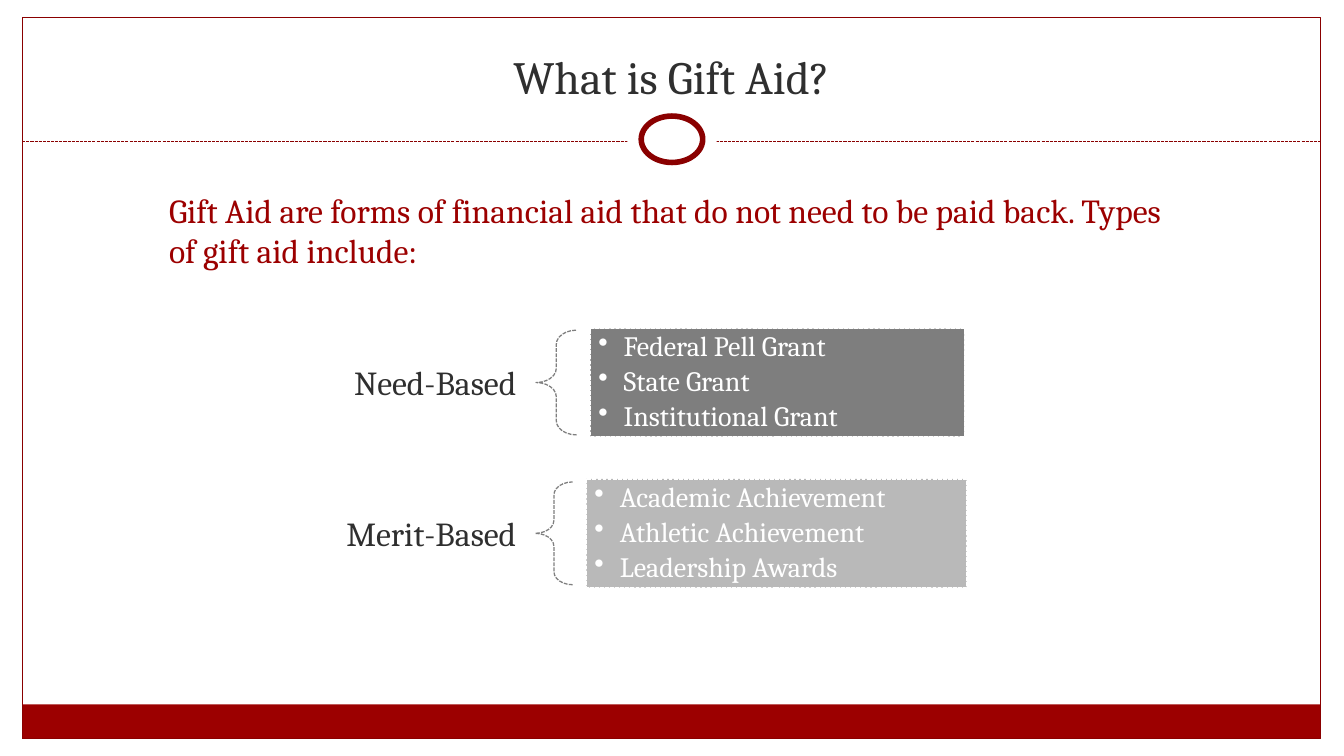
from lxml import etree
from pptx import Presentation
from pptx.dml.color import RGBColor
from pptx.enum import dml, shapes, text
from pptx.oxml import ns
from pptx.util import Cm, Pt

TITLE = "What is Gift Aid?"
INTRO = ("Gift Aid are forms of financial aid that do not need to be paid back. "
         "Types of gift aid include:")
# Lengths in cm: middle is the row's vertical centre, box is (left, width, height)
GROUPS = [
    {"label": "Need-Based", "color": "gray", "middle": 9.64,
     "brace": (13.51, 1.02, 2.64), "box": (14.88, 9.42, 2.72),
     "items": ["Federal Pell Grant", "State Grant", "Institutional Grant"]},
    {"label": "Merit-Based", "color": "silver", "middle": 13.44,
     "brace": (13.49, 0.94, 2.59), "box": (14.78, 9.58, 2.74),
     "items": ["Academic Achievement", "Athletic Achievement", "Leadership Awards"]},
]
COLORS = {"white": "FFFFFF", "red": "9C0000", "dark red": "8A0000",
          "ink": "2F2F2F", "gray": "7E7E7E", "silver": "B9B9B9"}
FONT = "Cambria"
WIDTH, HEIGHT = 33.87, 19.05
FRAME_LEFT, FRAME_TOP, FRAME_WIDTH, FRAME_HEIGHT = 0.56, 0.43, 32.72, 18.19
BAR_HEIGHT = 0.87
RULE_Y, RING_Y = 3.56, 3.51
LABEL_LEFT, LABEL_WIDTH, LABEL_HEIGHT = 6.96, 6.53, 2.77


def rgb(name):
    return RGBColor.from_string(COLORS[name])


def style_line(line, color, width, dashed=False):
    line.color.rgb = rgb(color)
    line.width = Pt(width)
    if dashed:
        line.dash_style = dml.MSO_LINE.SQUARE_DOT


def add_shape(slide, kind, area, fill=None, line=None):
    """Add a preset shape; line is (color, points, dashed) or None."""
    shape = slide.shapes.add_shape(kind, *map(Cm, area))
    shape.shadow.inherit = False
    if fill:
        shape.fill.solid()
        shape.fill.fore_color.rgb = rgb(fill)
    else:
        shape.fill.background()
    if line:
        style_line(shape.line, *line)
    else:
        shape.line.fill.background()
    return shape


def centered(middle_x, middle_y, width, height):
    return middle_x - width / 2, middle_y - height / 2, width, height


def set_frame(shape, anchor, side=0.25, edge=0.13):
    frame = shape.text_frame
    frame.word_wrap = True
    frame.auto_size = text.MSO_AUTO_SIZE.NONE
    frame.vertical_anchor = anchor
    frame.margin_left = frame.margin_right = Cm(side)
    frame.margin_top = frame.margin_bottom = Cm(edge)
    return frame


def write(paragraph, words, size, color, align=text.PP_ALIGN.LEFT):
    paragraph.alignment = align
    run = paragraph.add_run()
    run.text = words
    run.font.name = FONT
    run.font.size = Pt(size)
    run.font.color.rgb = rgb(color)


def add_bullet(paragraph):
    properties = paragraph._p.get_or_add_pPr()
    properties.set("marL", str(Cm(0.64)))
    properties.set("indent", str(-Cm(0.64)))
    etree.SubElement(properties, ns.qn("a:buChar")).set("char", "•")


def add_decoration(slide):
    kinds = shapes.MSO_SHAPE
    bar_top = FRAME_TOP + FRAME_HEIGHT - BAR_HEIGHT
    add_shape(slide, kinds.RECTANGLE,
              (FRAME_LEFT, bar_top, FRAME_WIDTH, BAR_HEIGHT), "red")
    add_shape(slide, kinds.RECTANGLE,
              (FRAME_LEFT, FRAME_TOP, FRAME_WIDTH, FRAME_HEIGHT),
              line=("dark red", 0.75))
    rule = slide.shapes.add_connector(
        shapes.MSO_CONNECTOR.STRAIGHT, Cm(FRAME_LEFT), Cm(RULE_Y),
        Cm(FRAME_LEFT + FRAME_WIDTH), Cm(RULE_Y))
    style_line(rule.line, "dark red", 0.75, True)
    etree.SubElement(rule._element.spPr, ns.qn("a:effectLst"))
    add_shape(slide, kinds.OVAL, centered(WIDTH / 2, RING_Y, 2.26, 1.7), "white")
    add_shape(slide, kinds.OVAL, centered(WIDTH / 2, RING_Y, 1.55, 1.17),
              "white", ("dark red", 4))


def add_group(slide, group):
    """Add one kind of aid: label, brace and bulleted box on a common centre."""
    middle = group["middle"]
    label = slide.shapes.add_textbox(
        Cm(LABEL_LEFT), Cm(middle - LABEL_HEIGHT / 2), Cm(LABEL_WIDTH), Cm(LABEL_HEIGHT))
    frame = set_frame(label, text.MSO_ANCHOR.MIDDLE, 0.48, 0.18)
    write(frame.paragraphs[0], group["label"], 24, "ink", text.PP_ALIGN.RIGHT)

    left, width, height = group["brace"]
    brace = add_shape(slide, shapes.MSO_SHAPE.LEFT_BRACE,
                      (left, middle - height / 2, width, height),
                      line=("gray", 0.9, True))
    brace.adjustments[0] = 0.35

    left, width, height = group["box"]
    box = add_shape(slide, shapes.MSO_SHAPE.RECTANGLE,
                    (left, middle - height / 2, width, height),
                    group["color"], ("white", 0.9, True))
    frame = set_frame(box, text.MSO_ANCHOR.MIDDLE, 0.2, 0.2)
    for index, item in enumerate(group["items"]):
        paragraph = frame.add_paragraph() if index else frame.paragraphs[0]
        paragraph.line_spacing = 0.9
        paragraph.space_after = Pt(3.5)
        add_bullet(paragraph)
        write(paragraph, item, 20, "white")


def main():
    presentation = Presentation()
    presentation.slide_width, presentation.slide_height = Cm(WIDTH), Cm(HEIGHT)
    slide = presentation.slides.add_slide(presentation.slide_layouts[5])
    add_decoration(slide)

    title = slide.shapes.title
    title.left, title.top, title.width, title.height = map(Cm, (1.12, 0.64, 31.6, 2.11))
    frame = set_frame(title, text.MSO_ANCHOR.BOTTOM)
    write(frame.paragraphs[0], TITLE, 33, "ink", text.PP_ALIGN.CENTER)

    intro = slide.shapes.add_textbox(*map(Cm, (4.01, 4.65, 26.24, 12.29)))
    frame = set_frame(intro, text.MSO_ANCHOR.TOP)
    write(frame.paragraphs[0], INTRO, 24, "red")

    for group in GROUPS:
        add_group(slide, group)
    presentation.save("out.pptx")


if __name__ == "__main__":
    main()
